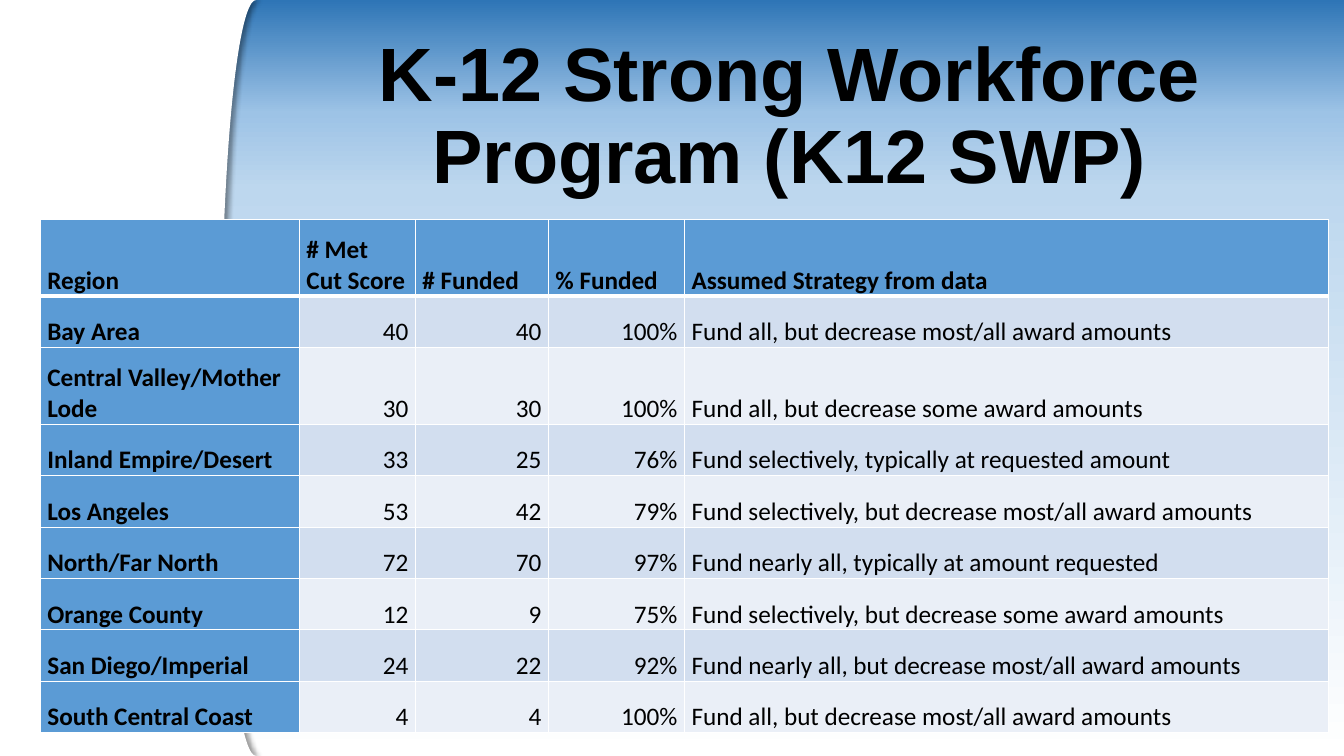
import dataclasses

import pptx
import pptx.dml.color
import pptx.enum.shapes
import pptx.enum.text
import pptx.oxml
import pptx.oxml.ns
import pptx.util

Inches = pptx.util.Inches
Pt = pptx.util.Pt
SHAPE = pptx.enum.shapes.MSO_SHAPE
ALIGN = pptx.enum.text.PP_ALIGN
ANCHOR = pptx.enum.text.MSO_ANCHOR


@dataclasses.dataclass(frozen=True)
class Theme:
    white: str = "FFFFFF"
    black: str = "000000"
    head: str = "5B9BD5"
    bands: tuple = ("D2DEEF", "EAEFF7")
    sky: tuple = ((0, "2E75B6"), (15, "9DC3E6"), (25, "BDD7EE"), (100, "FFFFFF"))
    title_font: str = "Arial"
    title_size: int = 54
    body_font: str = "Calibri"
    body_size: int = 18
    rule: int = 1
    head_rule: int = 3


THEME = Theme()
TITLE = "K-12 Strong Workforce Program (K12 SWP)"
COLS = (2.57, 1.15, 1.32, 1.35, 6.39)
ROW, TALL = 0.51, 0.76
TALL_ROWS = (0, 2)
DATA = (
    ("Region", "# Met Cut Score", "# Funded", "% Funded", "Assumed Strategy from data"),
    ("Bay Area", "40", "40", "100%", "Fund all, but decrease most/all award amounts"),
    ("Central Valley/Mother Lode", "30", "30", "100%",
     "Fund all, but decrease some award amounts"),
    ("Inland Empire/Desert", "33", "25", "76%",
     "Fund selectively, typically at requested amount"),
    ("Los Angeles", "53", "42", "79%",
     "Fund selectively, but decrease most/all award amounts"),
    ("North/Far North", "72", "70", "97%",
     "Fund nearly all, typically at amount requested"),
    ("Orange County", "12", "9", "75%",
     "Fund selectively, but decrease some award amounts"),
    ("San Diego/Imperial", "24", "22", "92%",
     "Fund nearly all, but decrease most/all award amounts"),
    ("South Central Coast", "4", "4", "100%",
     "Fund all, but decrease most/all award amounts"),
)


def rgb(code):
    return pptx.dml.color.RGBColor.from_string(code)


def parse(xml):
    return pptx.oxml.parse_xml(xml.replace(">", f" {pptx.oxml.ns.nsdecls('a')}>", 1))


def style(para, font, size, bold):
    para.font.name = font
    para.font.size = Pt(size)
    para.font.bold = bold
    para.font.color.rgb = rgb(THEME.black)


def paint_sky(slide):
    """Fill the background with a gradient that fades downwards."""
    slide.background.fill.gradient()
    grad = slide.element.xpath(".//p:bg//a:gradFill")[0]
    for child in list(grad):
        grad.remove(child)
    stops = "".join(
        f'<a:gs pos="{pos * 1000}"><a:srgbClr val="{code}"/></a:gs>'
        for pos, code in THEME.sky)
    grad.append(parse(f"<a:gsLst>{stops}</a:gsLst>"))
    grad.append(parse('<a:lin ang="5400000" scaled="0"></a:lin>'))


def add_panel(slide, kind, box):
    panel = slide.shapes.add_shape(kind, *map(Inches, box))
    panel.shadow.inherit = False
    panel.fill.solid()
    panel.fill.fore_color.rgb = rgb(THEME.white)
    panel.line.fill.background()
    return panel


def add_side(slide, box):
    """White left margin with a curved, shadowed edge."""
    left, top, width, height = box
    curve = add_panel(slide, SHAPE.FLOWCHART_STORED_DATA,
                      (left + 0.45, top, width - 0.45, height))
    glow = curve.element.spPr.find(pptx.oxml.ns.qn("a:effectLst"))
    glow.append(parse(
        f'<a:outerShdw blurRad="{Pt(4)}" dist="{Pt(3)}" dir="0" algn="l" rotWithShape="0">'
        f'<a:srgbClr val="{THEME.black}"><a:alpha val="40000"/></a:srgbClr></a:outerShdw>'))
    add_panel(slide, SHAPE.RECTANGLE, (left, top, 1.16, height))


def add_title(slide, box):
    frame = slide.shapes.add_textbox(*map(Inches, box)).text_frame
    frame.word_wrap = True
    frame.vertical_anchor = ANCHOR.MIDDLE
    para = frame.paragraphs[0]
    para.text = TITLE
    para.alignment = ALIGN.CENTER
    para.line_spacing = 0.9
    style(para, THEME.title_font, THEME.title_size, True)


def add_edges(cell, row):
    """Draw white borders, with a heavier rule under the header."""
    heavy = {0: "B", 1: "T"}.get(row)
    for side in "LRTB":
        width = THEME.head_rule if side == heavy else THEME.rule
        cell._tc.get_or_add_tcPr().append(parse(
            f'<a:ln{side} w="{Pt(width)}"><a:solidFill>'
            f'<a:srgbClr val="{THEME.white}"/></a:solidFill></a:ln{side}>'))


def fill_cell(cell, text, row, col):
    lead = row == 0 or col == 0
    add_edges(cell, row)
    cell.fill.solid()
    cell.fill.fore_color.rgb = rgb(THEME.head if lead else THEME.bands[(row - 1) % 2])
    cell.margin_left = cell.margin_right = Inches(0.07)
    cell.margin_top = cell.margin_bottom = 0
    cell.vertical_anchor = ANCHOR.BOTTOM
    para = cell.text_frame.paragraphs[0]
    para.text = text
    para.alignment = ALIGN.RIGHT if row and col in (1, 2, 3) else ALIGN.LEFT
    style(para, THEME.body_font, THEME.body_size, lead)


def add_grid(slide, box):
    table = slide.shapes.add_table(len(DATA), len(COLS), *map(Inches, box)).table
    table.first_col = True
    for col, width in zip(table.columns, COLS):
        col.width = Inches(width)
    for row, texts in enumerate(DATA):
        table.rows[row].height = Inches(TALL if row in TALL_ROWS else ROW)
        for col, text in enumerate(texts):
            fill_cell(table.cell(row, col), text, row, col)


def main():
    deck = pptx.Presentation()
    deck.slide_width, deck.slide_height = Inches(13.33), Inches(7.5)
    slide = deck.slides.add_slide(deck.slide_layouts[6])
    paint_sky(slide)
    add_side(slide, (0, 0, 2.54, 7.5))
    add_grid(slide, (0.4, 2.18, 12.78, 5.06))
    add_title(slide, (2.54, 0.4, 10.58, 1.54))
    deck.save("out.pptx")


if __name__ == "__main__":
    main()
